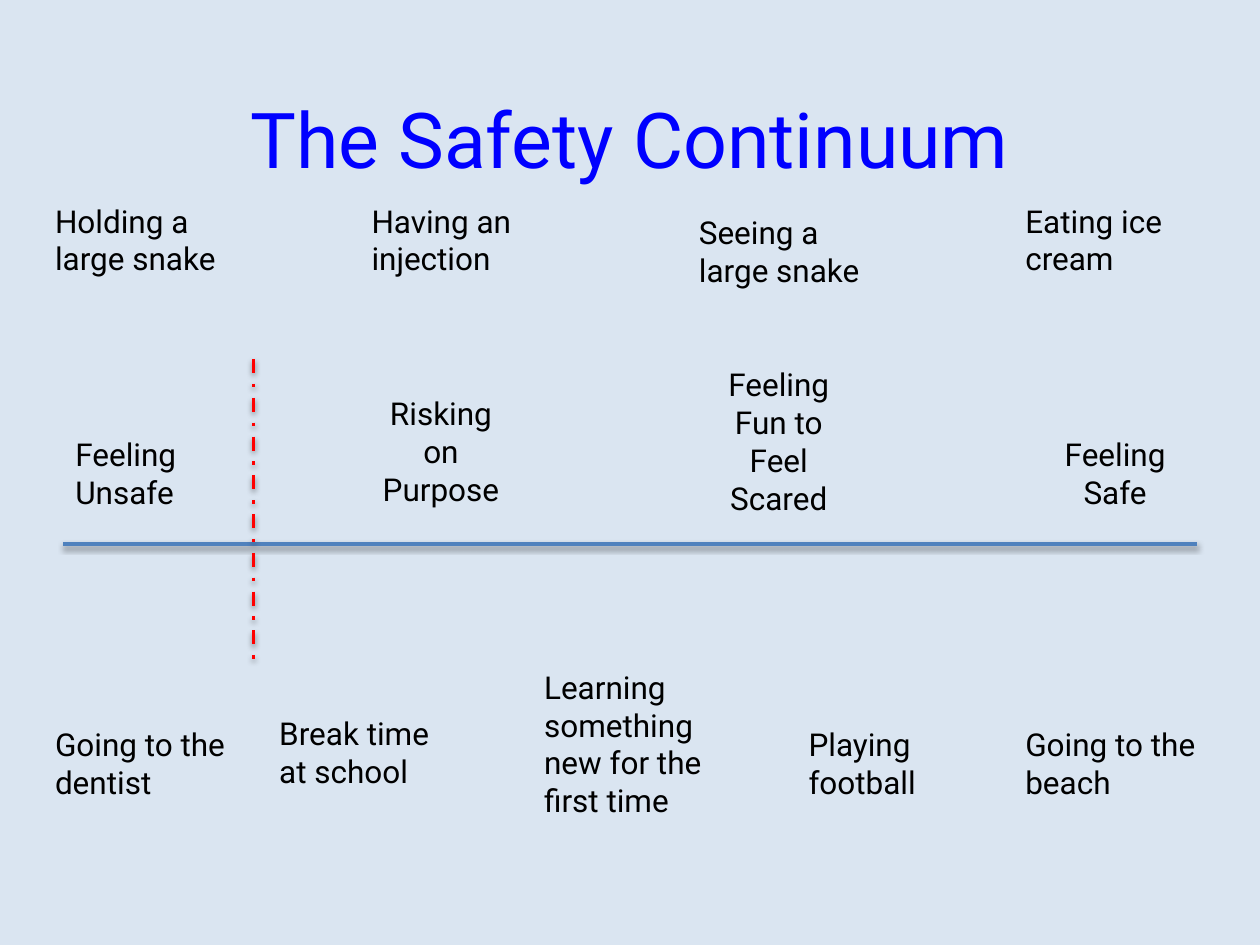
from lxml.etree import SubElement
from pptx import Presentation
from pptx.dml.color import RGBColor
from pptx.enum.dml import MSO_LINE
from pptx.enum.shapes import MSO_CONNECTOR
from pptx.enum.text import MSO_ANCHOR, MSO_AUTO_SIZE, PP_ALIGN
from pptx.oxml.ns import qn
from pptx.util import Cm, Pt

BACKGROUND = RGBColor(0xDA, 0xE5, 0xF1)
TITLE_BLUE = RGBColor(0x00, 0x00, 0xFF)
SCALE_BLUE = RGBColor(0x4F, 0x81, 0xBD)
LIMIT_RED = RGBColor(0xFF, 0x00, 0x00)
BLACK = RGBColor(0x00, 0x00, 0x00)

FEELING_WIDTH = 3.3
EXAMPLE_WIDTH = 4.11

FEELINGS = [
    ("Feeling Unsafe", 1.27, 8.64, 2, PP_ALIGN.LEFT),
    ("Risking on Purpose", 7.24, 7.82, 3, PP_ALIGN.CENTER),
    ("Feeling Fun to Feel Scared", 14.05, 7.24, 4, PP_ALIGN.CENTER),
    ("Feeling Safe", 20.83, 8.64, 2, PP_ALIGN.CENTER),
]
EXAMPLES = [
    ("Holding a large snake", 0.86, 3.94, 2),
    ("Having an injection", 7.24, 3.94, 2),
    ("Seeing a large snake", 13.84, 4.17, 2),
    ("Eating ice cream", 20.42, 3.94, 2),
    ("Going to the dentist", 0.86, 14.5, 2),
    ("Break time at school", 5.38, 14.27, 2),
    ("Learning something new for the first time", 10.72, 13.34, 4),
    ("Playing football", 16.05, 14.5, 2),
    ("Going to the beach", 20.42, 14.5, 2),
]


class SlideBuilder:
    font_name = "Roboto"
    title_size = Pt(44)
    label_size = Pt(18)
    line_width = Pt(2)

    def __init__(self, slide):
        self.slide = slide
        fill = slide.background.fill
        fill.solid()
        fill.fore_color.rgb = BACKGROUND

    def format_text(self, para, size, color, align):
        para.alignment = align
        para.font.name = self.font_name
        para.font.size = size
        para.font.color.rgb = color

    def title(self, text, left, top, width, height):
        box = self.slide.shapes.title
        box.left, box.top, box.width, box.height = map(Cm, (left, top, width, height))
        frame = box.text_frame
        frame.text = text
        frame.vertical_anchor = MSO_ANCHOR.MIDDLE
        self.format_text(frame.paragraphs[0], self.title_size, TITLE_BLUE, PP_ALIGN.CENTER)

    def label(self, text, left, top, width, lines, align=PP_ALIGN.LEFT):
        height = 0.28 + 0.76 * lines
        box = self.slide.shapes.add_textbox(Cm(left), Cm(top), Cm(width), Cm(height))
        frame = box.text_frame
        frame.word_wrap = True
        frame.auto_size = MSO_AUTO_SIZE.SHAPE_TO_FIT_TEXT
        frame.text = text
        self.format_text(frame.paragraphs[0], self.label_size, BLACK, align)

    def line(self, start_x, start_y, end_x, end_y, color, dash=None):
        connector = self.slide.shapes.add_connector(
            MSO_CONNECTOR.STRAIGHT, Cm(start_x), Cm(start_y), Cm(end_x), Cm(end_y)
        )
        connector.line.color.rgb = color
        connector.line.width = self.line_width
        if dash:
            connector.line.dash_style = dash
        properties = connector._element.spPr
        effects = SubElement(properties, qn("a:effectLst"))
        shadow = SubElement(
            effects, qn("a:outerShdw"), blurRad="40000", dist="20000", dir="5400000", rotWithShape="0"
        )
        shade = SubElement(shadow, qn("a:srgbClr"), val=str(BLACK))
        SubElement(shade, qn("a:alpha"), val="38000")


def main():
    deck = Presentation()
    deck.slide_width, deck.slide_height = Cm(25.4), Cm(19.05)
    page = SlideBuilder(deck.slides.add_slide(deck.slide_layouts[5]))
    page.title("The Safety Continuum", 1.27, 1.63, 22.86, 2.31)
    page.line(1.27, 10.97, 24.13, 10.97, SCALE_BLUE)
    for text, left, top, lines, align in FEELINGS:
        page.label(text, left, top, FEELING_WIDTH, lines, align)
    page.line(5.11, 7.24, 5.11, 13.34, LIMIT_RED, MSO_LINE.DASH_DOT)
    for text, left, top, lines in EXAMPLES:
        page.label(text, left, top, EXAMPLE_WIDTH, lines)
    deck.save("out.pptx")


if __name__ == "__main__":
    main()
